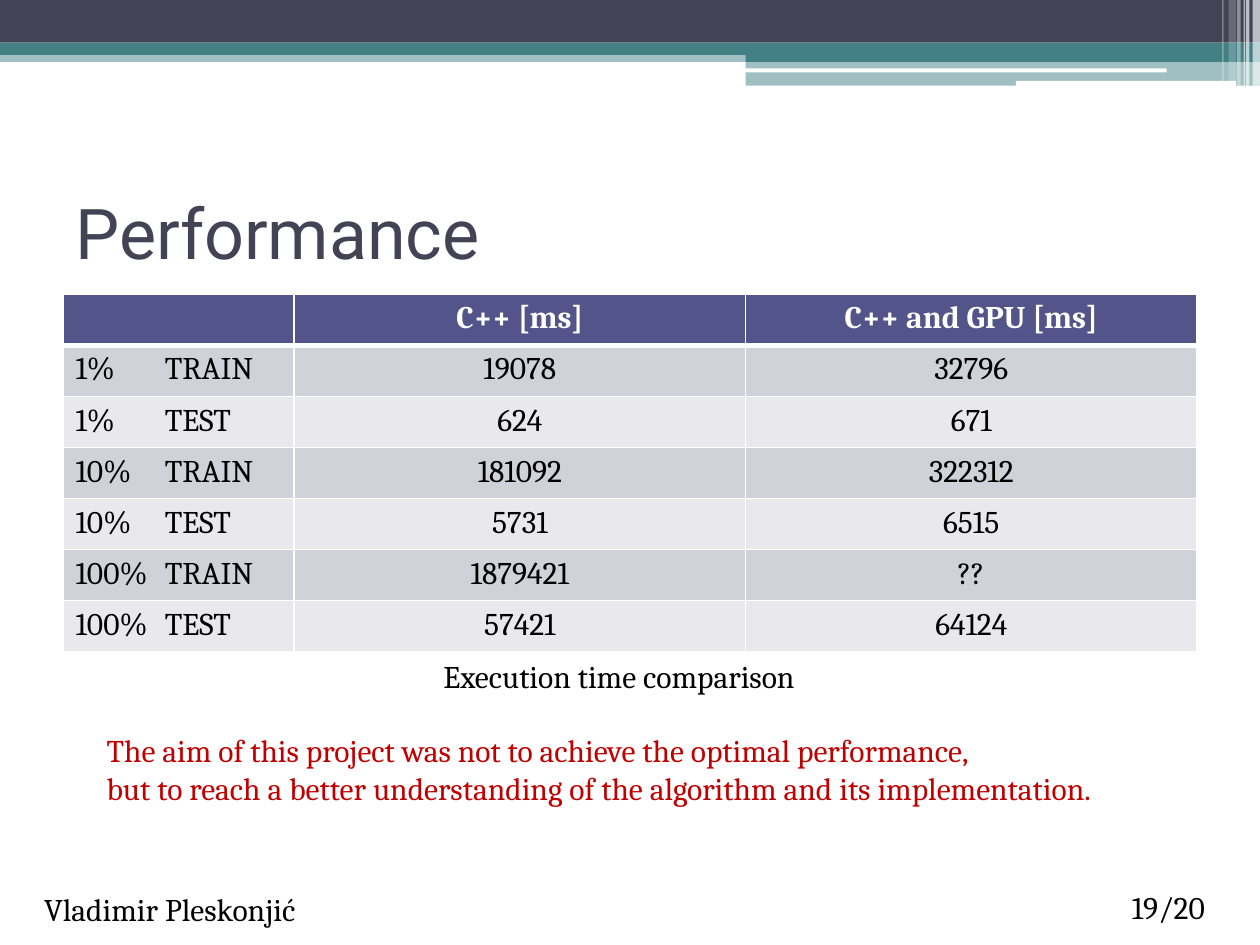
from lxml.etree import SubElement
from pptx import Presentation
from pptx.dml.color import RGBColor
from pptx.enum.shapes import MSO_SHAPE as Shape
from pptx.enum.text import MSO_ANCHOR as Anchor, PP_ALIGN as Align
from pptx.oxml import parse_xml
from pptx.oxml.ns import nsdecls, qn
from pptx.util import Cm, Pt

DARK, TEAL, WHITE, BLACK = "424456", "438086", "FFFFFF", "000000"
HEAD, ODD, EVEN, RED = "53548A", "D1D1DA", "E9E9ED", "C00000"

BANDS = [
    (Shape.RECTANGLE, 0, 1.02, 25.4, 0.23, TEAL, 50),
    (Shape.RECTANGLE, 0, 0, 25.4, 0.86, DARK, 100),
    (Shape.RECTANGLE, 0, 0.86, 25.4, 0.25, TEAL, 100),
    (Shape.RECTANGLE, 15.03, 1, 10.37, 0.25, TEAL, 100),
    (Shape.RECTANGLE, 15.03, 1.23, 10.37, 0.5, TEAL, 50),
    (Shape.ROUNDED_RECTANGLE, 15.02, 1.38, 8.5, 0.08, WHITE, 100),
    (Shape.ROUNDED_RECTANGLE, 20.48, 1.63, 4.44, 0.1, WHITE, 100),
]
STRIPES = [
    (25.25, 0.15, 1.73, 65),
    (25.12, 0.07, 1.73, 65),
    (25.07, 0.03, 1.73, 60),
    (24.94, 0.07, 1.73, 40),
    (24.77, 0.15, 1.63, 20),
    (24.64, 0.03, 1.63, 30),
]
TEXTS = [
    (["19/20"], 18.62, 17.78, 5.92, 1.07, 18, "Cambria", BLACK, Align.RIGHT, Anchor.TOP),
    (["Vladimir Pleskonjić"], 0.64, 17.81, 6.15, 1.02, 18, "Cambria", BLACK, Align.LEFT, Anchor.TOP),
    (["Performance"], 1.27, 3.18, 22.86, 2.97, 40, "Roboto", DARK, Align.LEFT, Anchor.MIDDLE),
    (["Execution time comparison"], 8.69, 13.13, 8.26, 1.02, 18, "Cambria", BLACK, Align.LEFT, Anchor.TOP),
    (["The aim of this project was not to achieve the optimal performance,",
      "but to reach a better understanding of the algorithm and its implementation."],
     1.9, 14.61, 22.02, 1.8, 18, "Cambria", RED, Align.LEFT, Anchor.TOP),
]
ROWS = [
    ("", "C++ [ms]", "C++ and GPU [ms]"),
    ("1%\tTRAIN", "19078", "32796"),
    ("1%\tTEST", "624", "671"),
    ("10%\tTRAIN", "181092", "322312"),
    ("10%\tTEST", "5731", "6515"),
    ("100%\tTRAIN", "1879421", "??"),
    ("100%\tTEST", "57421", "64124"),
]
WIDTHS = [4.66, 9.1, 9.1]
TALL = 1.03


def paint(fill, tone):
    fill.solid()
    fill.fore_color.rgb = RGBColor.from_string(tone)


def style(para, size, face, tone, align, bold=False):
    para.alignment = align
    for run in para.runs:
        font = run.font
        font.size, font.name, font.bold = Pt(size), face, bold
        font.color.rgb = RGBColor.from_string(tone)


def band(slide, kind, x, y, w, h, tone, alpha):
    shape = slide.shapes.add_shape(kind, Cm(x), Cm(y), Cm(w), Cm(h))
    shape.shadow.inherit = False
    shape.line.fill.background()
    paint(shape.fill, tone)
    if alpha < 100:
        color = shape.fill._xPr.find(".//" + qn("a:srgbClr"))
        SubElement(color, qn("a:alpha"), val=str(alpha * 1000))


def label(slide, lines, x, y, w, h, size, face, tone, align, anchor):
    frame = slide.shapes.add_textbox(Cm(x), Cm(y), Cm(w), Cm(h)).text_frame
    frame.word_wrap = True
    frame.vertical_anchor = anchor
    frame.text = "\n".join(lines)
    for para in frame.paragraphs:
        style(para, size, face, tone, align)


def edge(cell, base):
    props = cell._tc.get_or_add_tcPr()
    sides = [("L", 1), ("R", 1), ("T", 1), ("B", base)]
    for spot, (side, wide) in enumerate(sides):
        props.insert(spot, parse_xml(
            f'<a:ln{side} {nsdecls("a")} w="{Pt(wide)}"><a:solidFill>'
            f'<a:srgbClr val="{WHITE}"/></a:solidFill></a:ln{side}>'))


def tab(para, place):
    stops = SubElement(para._p.get_or_add_pPr(), qn("a:tabLst"))
    SubElement(stops, qn("a:tab"), pos=str(Cm(place)), algn="l")


def grid(slide):
    table = slide.shapes.add_table(
        len(ROWS), len(WIDTHS), Cm(1.27), Cm(5.93),
        Cm(sum(WIDTHS)), Cm(TALL * len(ROWS))).table
    for col, wide in zip(table.columns, WIDTHS):
        col.width = Cm(wide)
    for r, row in enumerate(ROWS):
        table.rows[r].height = Cm(TALL)
        top = r == 0
        back = HEAD if top else ODD if r % 2 else EVEN
        for c, text in enumerate(row):
            cell = table.cell(r, c)
            cell.text_frame.text = text
            para = cell.text_frame.paragraphs[0]
            style(para, 18, "Cambria", WHITE if top else BLACK,
                  Align.CENTER if c else Align.LEFT, top)
            if "\t" in text:
                tab(para, 1.8)
            paint(cell.fill, back)
            edge(cell, 3 if top else 1)


def main():
    deck = Presentation()
    deck.slide_width, deck.slide_height = Cm(25.4), Cm(19.05)
    slide = deck.slides.add_slide(deck.slide_layouts[6])
    for item in BANDS:
        band(slide, *item)
    for x, w, h, alpha in STRIPES:
        band(slide, Shape.RECTANGLE, x, 0, w, h, WHITE, alpha)
    for item in TEXTS:
        label(slide, *item)
    grid(slide)
    deck.save("out.pptx")


if __name__ == "__main__":
    main()
